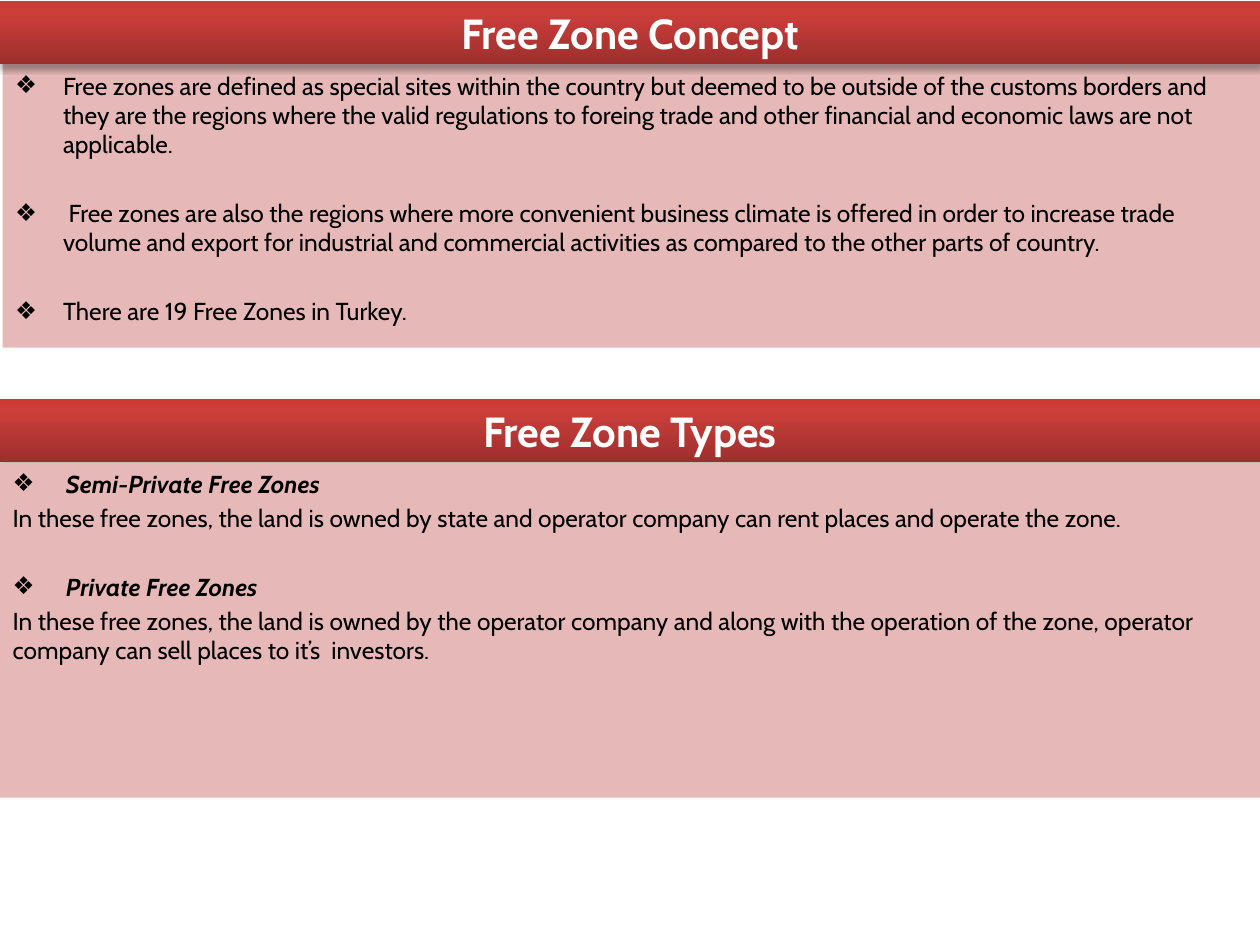
from dataclasses import dataclass

from pptx import Presentation
from pptx.dml.color import RGBColor
from pptx.enum.text import MSO_ANCHOR, MSO_AUTO_SIZE, PP_ALIGN
from pptx.oxml import parse_xml
from pptx.oxml.ns import nsdecls
from pptx.shapes.placeholder import SlidePlaceholder
from pptx.slide import Slide
from pptx.util import Inches, Pt


@dataclass(frozen=True)
class Theme:
    font: str = "Cabin"
    head: int = 24
    body: int = 14
    near: float = 2.8
    far: float = 22.4
    indent: float = 0.38
    panel: str = "E6B9B8"
    ink: str = "000000"
    light: str = "FFFFFF"
    ramp: tuple[tuple[int, str], ...] = (
        (0, "9C2F2D"), (80, "CB3E3A"), (100, "CE3B37"))


@dataclass(frozen=True)
class Box:
    left: float
    top: float
    width: float
    height: float


@dataclass(frozen=True)
class Item:
    text: str
    bullet: bool = True
    strong: bool = False
    gap: float = Theme.near


@dataclass(frozen=True)
class Part:
    title: str
    title_id: int
    body_id: int
    banner: Box
    panel: Box
    items: tuple[Item, ...]


THEME = Theme()

PARTS = (
    Part("Free Zone Concept", 0, 2, Box(0, 0.01, 10, 0.5), Box(0.02, 0.51, 9.98, 2.25), (
        Item("Free zones are defined as special sites within the country but deemed "
             "to be outside of the customs borders and they are the regions where the "
             "valid regulations to foreing trade and other financial and economic laws "
             "are not applicable."),
        Item(" Free zones are also the regions where more convenient business climate "
             "is offered in order to increase trade volume and export for industrial "
             "and commercial activities as compared to the other parts of country.",
             gap=THEME.far),
        Item("There are 19 Free Zones in Turkey.", gap=THEME.far),
    )),
    Part("Free Zone Types", 3, 4, Box(0, 3.17, 10, 0.5), Box(0, 3.67, 10, 2.66), (
        Item(" Semi-Private Free Zones", strong=True),
        Item("In these free zones, the land is owned by state and operator company "
             "can rent places and operate the zone.", bullet=False),
        Item(" Private Free Zones", strong=True, gap=THEME.far),
        Item("In these free zones, the land is owned by the operator company and along "
             "with the operation of the zone, operator company can sell places to it’s  "
             "investors.", bullet=False),
    )),
)


def place(shape: SlidePlaceholder, box: Box, anchor: MSO_ANCHOR) -> None:
    shape.left, shape.top = Inches(box.left), Inches(box.top)
    shape.width, shape.height = Inches(box.width), Inches(box.height)
    frame = shape.text_frame
    frame.word_wrap = True
    frame.auto_size = MSO_AUTO_SIZE.NONE
    frame.vertical_anchor = anchor


def style(para, size: int, color: str, bold: bool, italic: bool = False) -> None:
    for run in para.runs:
        font = run.font
        font.name, font.size = THEME.font, Pt(size)
        font.bold, font.italic = bold, italic
        font.color.rgb = RGBColor.from_string(color)


def gloss(shape: SlidePlaceholder) -> None:
    """Add the three-stop gradient and the soft shadow below."""
    stops = "".join(
        f'<a:gs pos="{pos * 1000}"><a:srgbClr val="{color}"/></a:gs>'
        for pos, color in THEME.ramp)
    ns = nsdecls("a")
    props = shape._element.spPr
    props.append(parse_xml(
        f'<a:gradFill {ns} rotWithShape="1"><a:gsLst>{stops}</a:gsLst>'
        '<a:lin ang="16200000" scaled="0"/></a:gradFill>'))
    props.append(parse_xml(
        f'<a:effectLst {ns}><a:outerShdw blurRad="{Pt(3.5)}" dist="{Pt(2.2)}" '
        'dir="5400000" rotWithShape="0"><a:srgbClr val="000000">'
        '<a:alpha val="32000"/></a:srgbClr></a:outerShdw></a:effectLst>'))


def banner(shape: SlidePlaceholder, part: Part) -> None:
    place(shape, part.banner, MSO_ANCHOR.MIDDLE)
    gloss(shape)
    shape.text_frame.text = part.title
    para = shape.text_frame.paragraphs[0]
    para.alignment = PP_ALIGN.CENTER
    para.space_before = Pt(0)
    style(para, THEME.head, THEME.light, True)


def mark(para, bullet: bool) -> None:
    """Set the hanging indent and the bullet, or clear both."""
    props = para._p.get_or_add_pPr()
    indent = Inches(THEME.indent) if bullet else 0
    props.set("marL", str(indent))
    props.set("indent", str(-indent))
    tag = 'buChar {} char="❖"' if bullet else "buNone {}"
    props.append(parse_xml(f"<a:{tag.format(nsdecls('a'))}/>"))


def panel(shape: SlidePlaceholder, part: Part) -> None:
    place(shape, part.panel, MSO_ANCHOR.TOP)
    shape.fill.solid()
    shape.fill.fore_color.rgb = RGBColor.from_string(THEME.panel)
    frame = shape.text_frame
    frame.text = "\n".join(item.text for item in part.items)
    for para, item in zip(frame.paragraphs, part.items):
        para.space_before = Pt(item.gap)
        mark(para, item.bullet)
        style(para, THEME.body, THEME.ink, item.strong, item.strong)


def build(slide: Slide) -> None:
    slots = {shape.placeholder_format.idx: shape for shape in slide.placeholders}
    for part in PARTS:
        banner(slots.pop(part.title_id), part)
        panel(slots.pop(part.body_id), part)
    for spare in slots.values():
        spare._element.getparent().remove(spare._element)
    # The first panel lies behind its banner, so the banner's shadow falls on it.
    title = slide.shapes.title._element
    first = next(s for s in slide.placeholders
                 if s.placeholder_format.idx == PARTS[0].body_id)
    title.addprevious(first._element)


def main() -> None:
    deck = Presentation()
    deck.slide_width, deck.slide_height = Inches(10), Inches(7.5)
    build(deck.slides.add_slide(deck.slide_layouts.get_by_name("Comparison")))
    deck.save("out.pptx")


if __name__ == "__main__":
    main()
